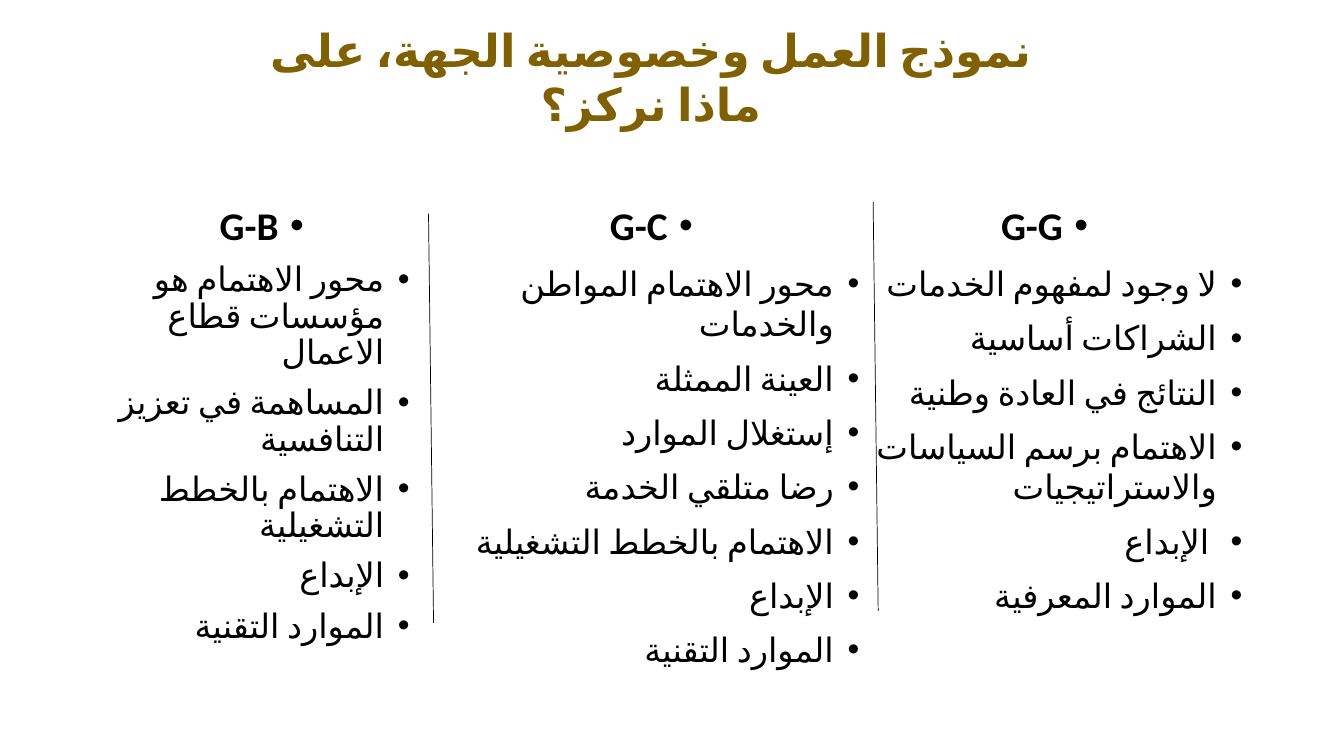
from lxml import etree
from pptx import Presentation
from pptx.dml.color import RGBColor
from pptx.enum.lang import MSO_LANGUAGE_ID as Language
from pptx.enum.shapes import MSO_CONNECTOR as Connector
from pptx.enum.text import MSO_ANCHOR as Anchor, MSO_AUTO_SIZE as AutoSize, PP_ALIGN as Align
from pptx.oxml.ns import qn
from pptx.util import Inches, Pt

GOLD = RGBColor(0x80, 0x60, 0x00)
BLACK = RGBColor(0x00, 0x00, 0x00)
FONT = "Calibri"


def write_paragraph(paragraph, text, size, color=BLACK, bold=False,
                    align=Align.RIGHT, line_spacing=1.0, space_before=0, bullet=False):
    """Fill a right-to-left paragraph with one formatted Arabic run."""
    paragraph.alignment = align
    paragraph.line_spacing = line_spacing
    paragraph.space_before = Pt(space_before)
    properties = paragraph._p.get_or_add_pPr()
    properties.set("rtl", "1")
    if bullet:
        properties.set("marL", str(Inches(0.25)))
        properties.set("indent", str(Inches(-0.25)))
        etree.SubElement(properties, qn("a:buFont")).set("typeface", "Arial")
        etree.SubElement(properties, qn("a:buChar")).set("char", "•")
    run = paragraph.add_run()
    run.text = text
    run.font.name = FONT
    run.font.size = Pt(size)
    run.font.bold = bold
    run.font.color.rgb = color
    run.font.language_id = Language.ARABIC
    complex_font = etree.SubElement(run.font._element, qn("a:cs"))
    complex_font.set("typeface", FONT)


def place(shape, left, top, width, height):
    shape.left, shape.top = Inches(left), Inches(top)
    shape.width, shape.height = Inches(width), Inches(height)
    shape.text_frame.word_wrap = True
    shape.text_frame.auto_size = AutoSize.NONE


presentation = Presentation()
presentation.slide_width = Inches(13.33)
presentation.slide_height = Inches(7.5)
slide = presentation.slides.add_slide(presentation.slide_layouts[1])

title = slide.shapes.title
place(title, 2.36, 0.14, 8.19, 1.24)
title.text_frame.vertical_anchor = Anchor.MIDDLE
write_paragraph(title.text_frame.paragraphs[0], "نموذج العمل وخصوصية الجهة، على ماذا نركز؟",
                32.4, color=GOLD, bold=True, align=Align.CENTER)

# Each column: left, width, line spacing of the items, heading, items
columns = [
    (8.3, 4.12, 1.0, "G-G", [
        "لا وجود لمفهوم الخدمات",
        "الشراكات أساسية",
        "النتائج في العادة وطنية",
        "الاهتمام برسم السياسات والاستراتيجيات",
        " الإبداع",
        "الموارد المعرفية",
    ]),
    (4.3, 4.32, 1.0, "G-C", [
        "محور الاهتمام المواطن والخدمات",
        "العينة الممثلة",
        "إستغلال الموارد",
        "رضا متلقي الخدمة",
        "الاهتمام بالخطط التشغيلية",
        "الإبداع",
        "الموارد التقنية",
    ]),
    (1.03, 3.13, 0.9, "G-B", [
        "محور الاهتمام هو مؤسسات قطاع الاعمال",
        "المساهمة في تعزيز التنافسية",
        "الاهتمام بالخطط التشغيلية",
        "الإبداع",
        "الموارد التقنية",
    ]),
]
for index, (left, width, line_spacing, heading, items) in enumerate(columns):
    if index == 0:
        column = slide.placeholders[1]
    else:
        column = slide.shapes.add_textbox(0, 0, 0, 0)
    place(column, left, 2, width, 4.76)
    frame = column.text_frame
    write_paragraph(frame.paragraphs[0], heading, 28, bold=True, align=Align.CENTER,
                    line_spacing=0.9, bullet=True)
    for item in items:
        write_paragraph(frame.add_paragraph(), item, 24, line_spacing=line_spacing,
                        space_before=10, bullet=True)

for left, top in [(4.25, 2.12), (8.66, 2)]:
    divider = slide.shapes.add_connector(Connector.STRAIGHT, Inches(left), Inches(top),
                                         Inches(left + 0.05), Inches(top + 4.06))
    divider.line.color.rgb = BLACK
    divider.line.width = Pt(0.5)
    etree.SubElement(divider._element.spPr, qn("a:effectLst"))

presentation.save("out.pptx")
